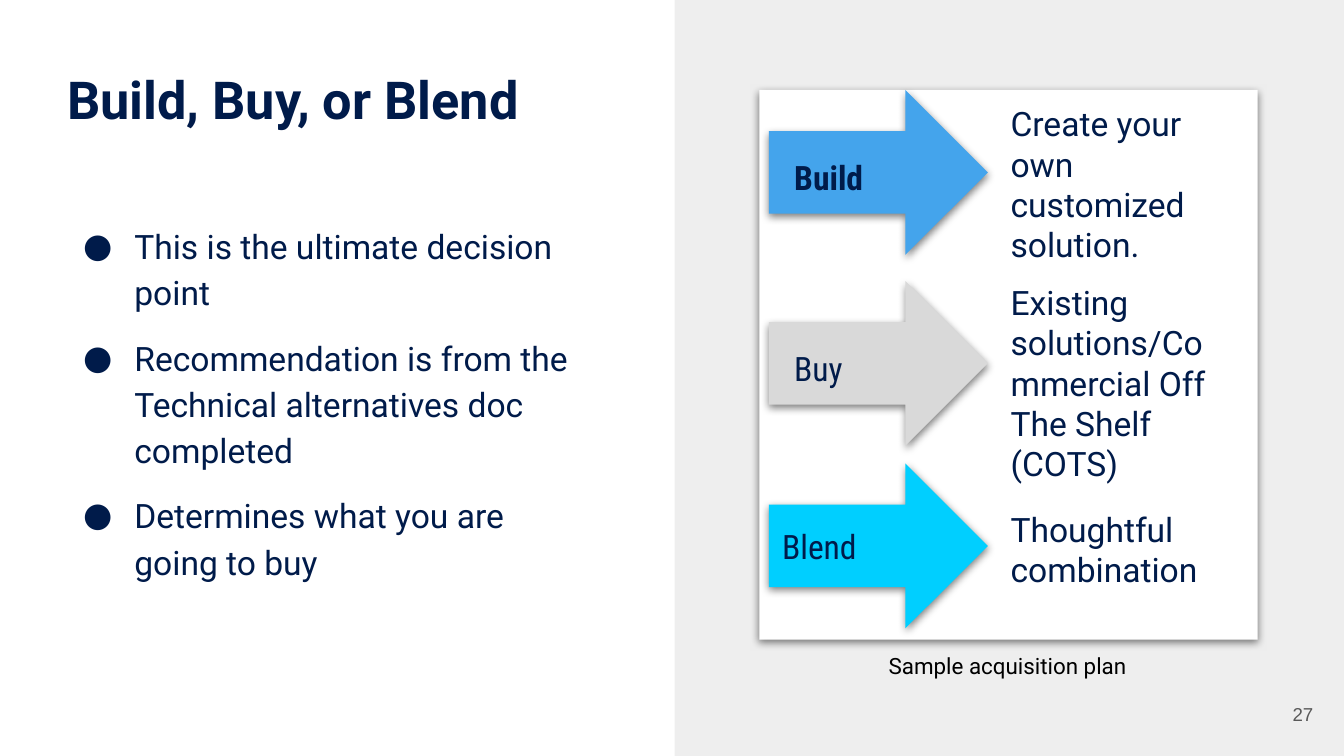
from lxml.etree import SubElement
from pptx import Presentation
from pptx.dml.color import RGBColor
from pptx.enum.shapes import MSO_SHAPE as SHAPE
from pptx.enum.text import MSO_ANCHOR as ANCHOR, PP_ALIGN as ALIGN
from pptx.oxml.ns import qn
from pptx.util import Cm, Pt

NAVY = RGBColor(0x00, 0x1B, 0x4A)
BLUE = RGBColor(0x44, 0xA4, 0xEC)
SILVER = RGBColor(0xD9, 0xD9, 0xD9)
CYAN = RGBColor(0x00, 0xCF, 0xFF)
PANEL = RGBColor(0xEE, 0xEE, 0xEE)
WHITE = RGBColor(0xFF, 0xFF, 0xFF)
BLACK = RGBColor(0x00, 0x00, 0x00)
GRAY = RGBColor(0x59, 0x59, 0x59)

BULLETS = [
    "This is the ultimate decision point",
    "Recommendation is from the Technical alternatives doc completed",
    "Determines what you are going to buy",
]

# label, bold, colour, arrow top, label offset from arrow, description top, description
OPTIONS = [
    ("Build", True, BLUE, 0, (0.23, 1.02), 0,
     "Create your own customized solution."),
    ("Buy", False, SILVER, 3.61, (0.23, 1.02), 3.38,
     "Existing solutions/Commercial Off The Shelf (COTS)"),
    ("Blend", False, CYAN, 7.06, (0, 0.94), 7.67,
     "Thoughtful combination"),
]


def add_text(s, box, *lines, font="Roboto", size=18, color=NAVY, bold=False,
             align=ALIGN.LEFT, anchor=ANCHOR.TOP, left=0.25, top=0.25,
             spacing=None, gap=0, bullet=None):
    """Add a text box with one paragraph per line; box and insets are in cm."""
    sp = s.shapes.add_textbox(*map(Cm, box))
    tf = sp.text_frame
    tf.word_wrap = True
    tf.vertical_anchor = anchor
    tf.margin_left, tf.margin_top = Cm(left), Cm(top)
    tf.margin_right = tf.margin_bottom = Cm(0.25)
    for i, line in enumerate(lines):
        p = tf.add_paragraph() if i else tf.paragraphs[0]
        p.alignment = align
        if spacing:
            p.line_spacing = spacing
        if i and gap:
            p.space_before = Pt(gap)
        if bullet:
            add_bullet(p, bullet, color)
        r = p.add_run()
        r.text = line
        r.font.name, r.font.size, r.font.bold = font, Pt(size), bold
        r.font.color.rgb = color


def add_bullet(p, char, color):
    pPr = p._p.get_or_add_pPr()
    pPr.set("marL", str(Cm(1.27)))
    pPr.set("indent", str(Cm(-0.97)))
    clr = SubElement(pPr, qn("a:buClr"))
    SubElement(clr, qn("a:srgbClr"), val=str(color))
    SubElement(pPr, qn("a:buFont"), typeface="Roboto")
    SubElement(pPr, qn("a:buChar"), char=char)


def add_block(s, kind, box, fill, shadow=False):
    sp = s.shapes.add_shape(kind, *map(Cm, box))
    sp.fill.solid()
    sp.fill.fore_color.rgb = fill
    sp.line.fill.background()
    sp.shadow.inherit = False
    if shadow:
        effects = sp._element.spPr.find(qn("a:effectLst"))
        outer = SubElement(effects, qn("a:outerShdw"), blurRad=str(Pt(4.5)),
                           dist=str(Pt(1.5)), dir="5400000", algn="bl",
                           rotWithShape="0")
        clr = SubElement(outer, qn("a:srgbClr"), val=str(BLACK))
        SubElement(clr, qn("a:alpha"), val="50000")


def add_message(s, x, y, w, h):
    add_text(s, (x, y, w, 1.45), "Build, Buy, or Blend", size=28, bold=True,
             left=0, top=0)
    add_text(s, (x, y + 2.64, w, h - 2.64), *BULLETS, left=0, spacing=1.15,
             gap=10, bullet="●")


def add_plan(s, x, y, w, h):
    """Draw the white card with one arrow and description per option."""
    add_block(s, SHAPE.RECTANGLE, (x, y, w, h), WHITE, shadow=True)
    arrow_x = x + 0.18
    for label, bold, color, arrow_top, (dx, dy), text_top, text in OPTIONS:
        arrow_y = y + arrow_top
        add_block(s, SHAPE.RIGHT_ARROW, (arrow_x, arrow_y, 4.14, 3.12), color,
                  shadow=True)
        add_text(s, (arrow_x + dx, arrow_y + dy, 4.34, 1.09), label,
                 font="Roboto Condensed", bold=bold)
        add_text(s, (x + 4.5, y + text_top, 4.34, 1.09), text)


def add_side_panel(s, x, y, w, h):
    add_block(s, SHAPE.RECTANGLE, (x, y, w, h), PANEL)
    add_plan(s, x + 1.6, y + 1.7, 9.42, 10.39)
    add_text(s, (x + 0.48, y + 12.07, 11.63, 1.02), "Sample acquisition plan",
             size=12, color=BLACK, align=ALIGN.CENTER)
    add_text(s, (x + 10.8, y + 12.95, 1.52, 1.09), "27", font="Arial", size=10,
             color=GRAY, align=ALIGN.RIGHT, anchor=ANCHOR.MIDDLE)


def main():
    prs = Presentation()
    prs.slide_width, prs.slide_height = Cm(25.4), Cm(14.29)
    s = prs.slides.add_slide(prs.slide_layouts[6])
    add_message(s, 1.27, 1.27, 10.13, 11.17)
    add_side_panel(s, 12.75, 0, 12.65, 14.29)
    prs.save("out.pptx")


if __name__ == "__main__":
    main()
